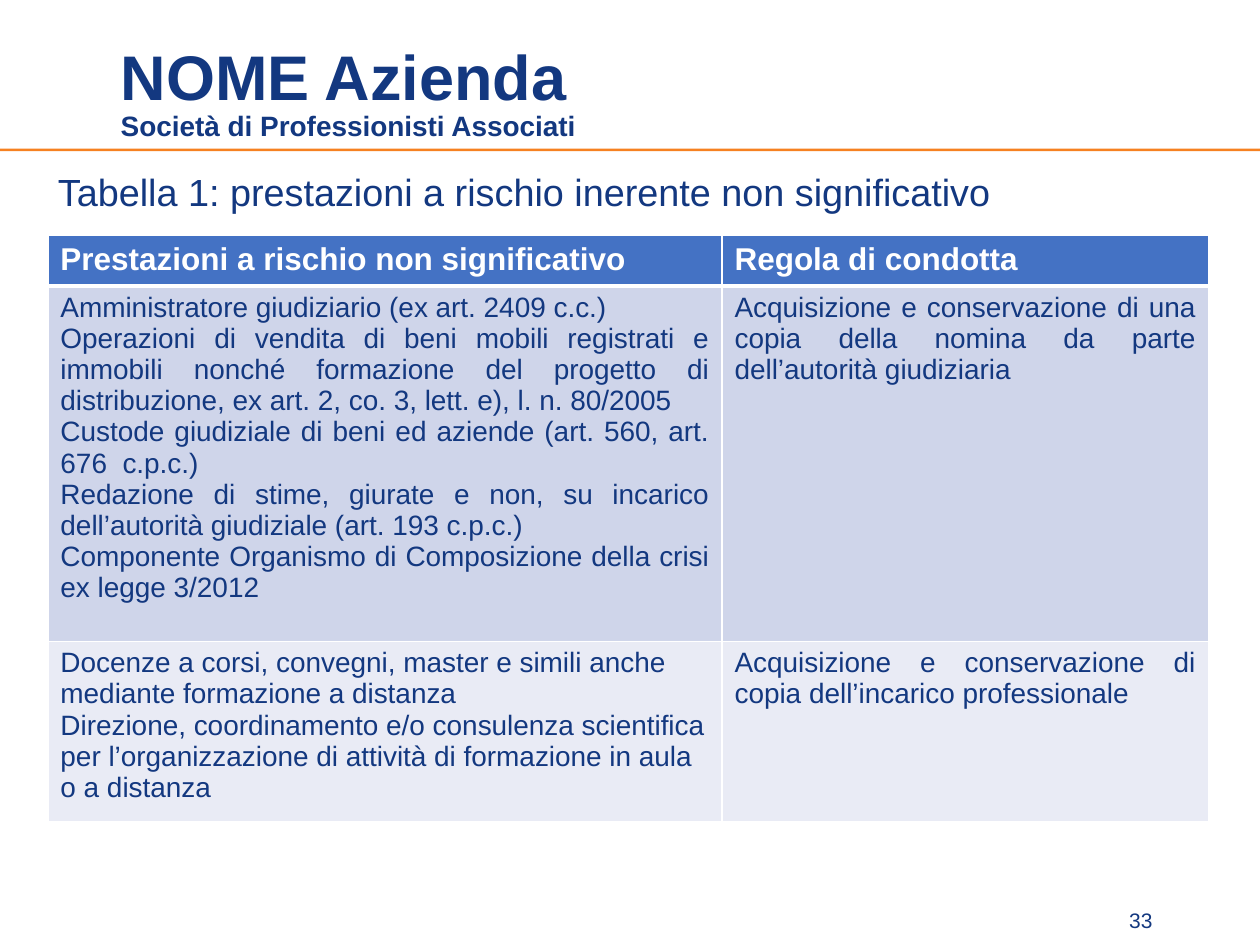
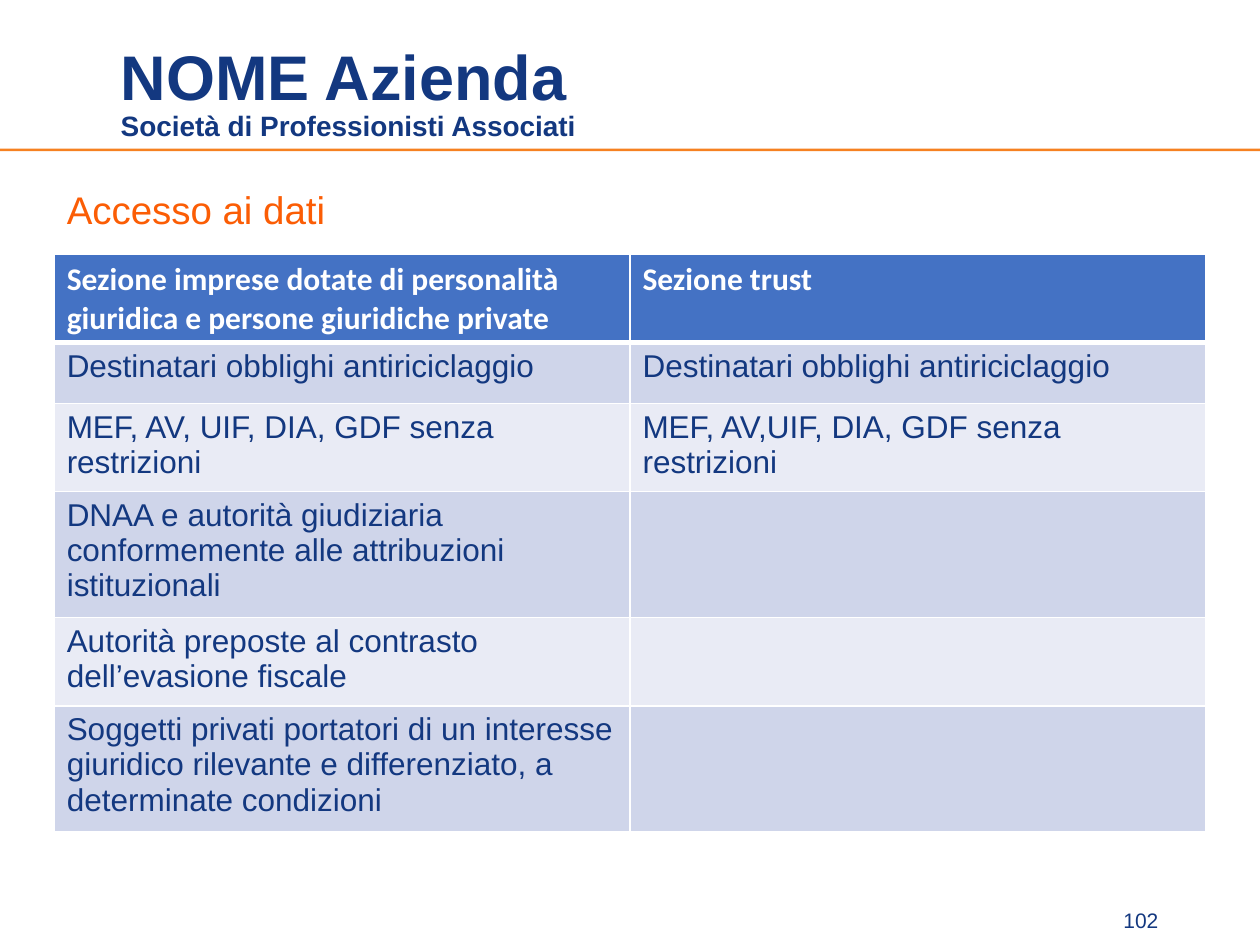
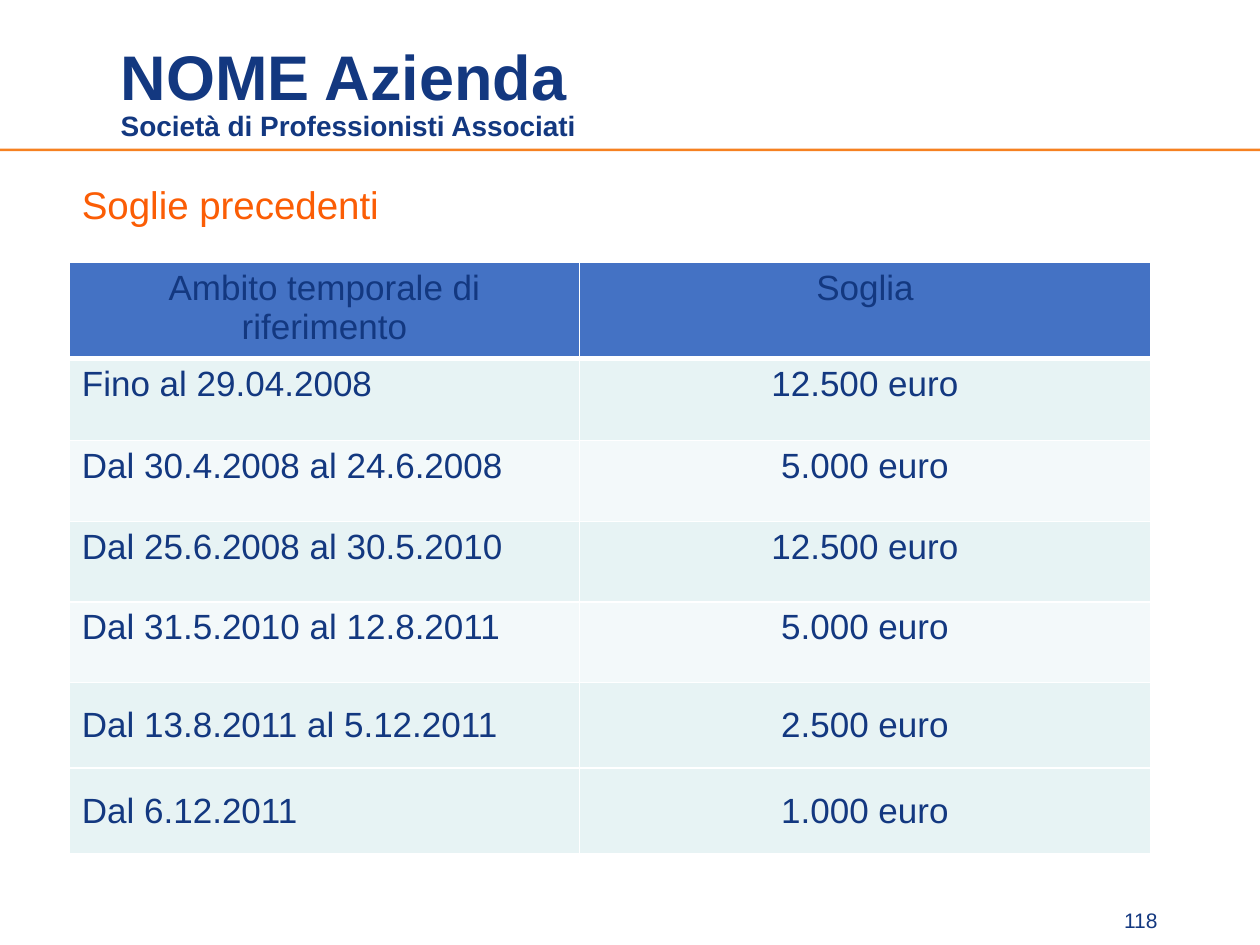
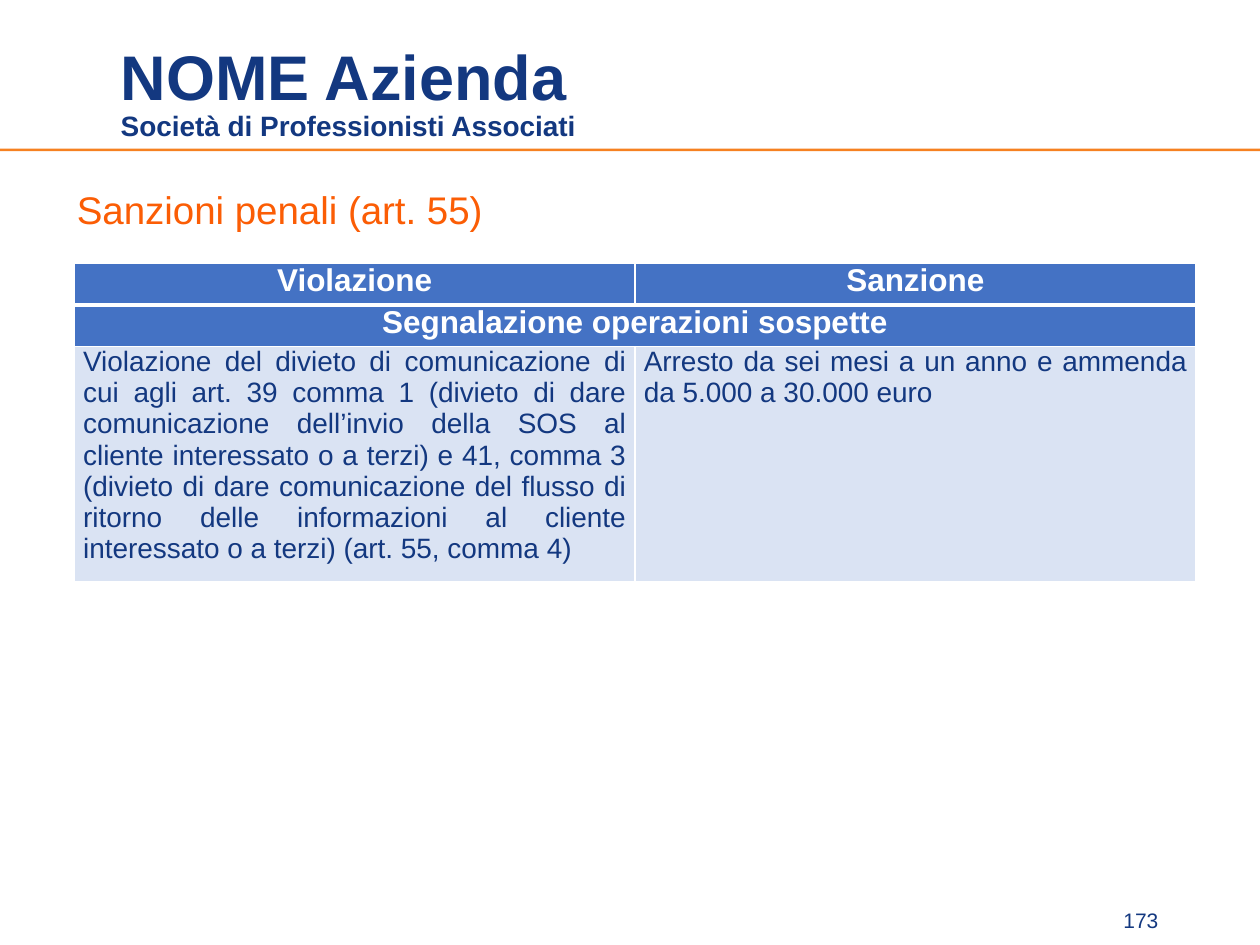
from pptx import Presentation
from pptx.dml.color import RGBColor
from pptx.enum.shapes import MSO_SHAPE
from pptx.enum.text import MSO_ANCHOR, MSO_AUTO_SIZE, PP_ALIGN
from pptx.oxml import parse_xml
from pptx.oxml.ns import nsdecls
from pptx.util import Inches, Pt

# Shared look
NAVY, ORANGE, RULE = "133880", "FB5D05", "F68121"
WHITE, BLUE = "FFFFFF", "4472C4"
ALIGN = {"l": PP_ALIGN.LEFT, "c": PP_ALIGN.CENTER, "j": PP_ALIGN.JUSTIFY}


def color(code):
    return RGBColor.from_string(code)


def style(para, size, hue=NAVY, bold=False, face="Arial", align="l"):
    para.alignment = ALIGN[align]
    for run in para.runs:
        font = run.font
        font.name, font.size, font.bold = face, Pt(size), bold
        font.color.rgb = color(hue)


# Content: "head" counts header rows, "align" has one letter per cell
pages = [
    {
        "page": 33, "title": "Tabella 1: prestazioni a rischio inerente non significativo",
        "box": (0.36, 1.33, 9.53, 0.47), "hue": NAVY, "size": 21.6,
        "at": (0.38, 1.87), "cols": [5.35, 3.86], "tall": [0.37, 2.82, 1.39],
        "head": 1, "type": ("Arial", WHITE, True), "sizes": (18, 16),
        "fills": ["CFD5EA", "E9EBF5"], "align": ["ll", "jj", "lj"],
        "rows": [
            ("Prestazioni a rischio non significativo", "Regola di condotta"),
            ("Amministratore giudiziario (ex art. 2409 c.c.)\n"
             "Operazioni di vendita di beni mobili registrati e immobili nonché "
             "formazione del progetto di distribuzione, ex art. 2, co. 3, lett. e), "
             "l. n. 80/2005\n"
             "Custode giudiziale di beni ed aziende (art. 560, art. 676  c.p.c.)\n"
             "Redazione di stime, giurate e non, su incarico dell’autorità giudiziale "
             "(art. 193 c.p.c.)\n"
             "Componente Organismo di Composizione della crisi ex legge 3/2012",
             "Acquisizione e conservazione di una copia della nomina da parte "
             "dell’autorità giudiziaria"),
            ("Docenze a corsi, convegni, master e simili anche mediante formazione "
             "a distanza\n"
             "Direzione, coordinamento e/o consulenza scientifica per "
             "l’organizzazione di attività di formazione in aula o a distanza",
             "Acquisizione e conservazione di copia dell’incarico professionale"),
        ],
    },
    {
        "page": 102, "title": "Accesso ai dati",
        "box": (0.43, 1.47, 9.53, 0.71), "hue": ORANGE, "size": 22,
        "at": (0.43, 2.02), "cols": [4.57, 4.57],
        "tall": [0.7, 0.48, 0.66, 0.94, 0.66, 0.94],
        "head": 1, "type": ("Calibri", WHITE, True), "sizes": (18, 18),
        "fills": ["CFD5EA", "E9EBF5"], "align": ["ll"] * 6,
        "rows": [
            ("Sezione imprese dotate di personalità giuridica e persone "
             "giuridiche private", "Sezione trust"),
            ("Destinatari obblighi antiriciclaggio",
             "Destinatari obblighi antiriciclaggio"),
            ("MEF, AV, UIF, DIA, GDF senza restrizioni",
             "MEF, AV,UIF, DIA, GDF senza restrizioni"),
            ("DNAA e autorità giudiziaria conformemente alle attribuzioni "
             "istituzionali", ""),
            ("Autorità preposte al contrasto dell’evasione fiscale", ""),
            ("Soggetti privati portatori di un interesse giuridico rilevante e "
             "differenziato, a determinate condizioni", ""),
        ],
    },
    {
        "page": 118, "title": "Soglie precedenti",
        "box": (0.55, 1.43, 9.45, 0.58), "hue": ORANGE, "size": 22,
        "at": (0.55, 2.08), "cols": [4.05, 4.53],
        "tall": [0.71, 0.65, 0.64, 0.64, 0.64, 0.68, 0.68],
        "head": 1, "type": ("Arial", NAVY, False), "sizes": (20, 20),
        "fills": ["E7F3F4", "F3F9FA", "E7F3F4", "F3F9FA", "E7F3F4", "E7F3F4"],
        "align": ["cc"] + ["lc"] * 6, "middle": (5, 6),
        "rows": [
            ("Ambito temporale di riferimento", "Soglia"),
            ("Fino al 29.04.2008", "12.500 euro"),
            ("Dal 30.4.2008 al 24.6.2008", "5.000 euro"),
            ("Dal 25.6.2008 al 30.5.2010", "12.500 euro"),
            ("Dal 31.5.2010 al 12.8.2011", "5.000 euro"),
            ("Dal 13.8.2011 al 5.12.2011", "2.500 euro"),
            ("Dal 6.12.2011", "1.000 euro"),
        ],
    },
    {
        "page": 173, "title": "Sanzioni penali (art. 55)",
        "box": (0.51, 1.47, 9.49, 0.47), "hue": ORANGE, "size": 22,
        "at": (0.59, 2.09), "cols": [4.45, 4.45], "tall": [0.33, 0.33, 1.72],
        "head": 2, "type": ("Arial", WHITE, True), "sizes": (18, 16),
        "fills": ["DAE3F3"], "align": ["cc", "cc", "jj"],
        "pad": (0.07, 0), "merge": 1,
        "rows": [
            ("Violazione", "Sanzione"),
            ("Segnalazione operazioni sospette", ""),
            ("Violazione del divieto di comunicazione di cui agli art. 39 comma 1 "
             "(divieto di dare comunicazione dell’invio della SOS al cliente "
             "interessato o a terzi) e 41, comma 3 (divieto di dare comunicazione "
             "del flusso di ritorno delle informazioni al cliente interessato o a "
             "terzi) (art. 55, comma 4)",
             "Arresto da sei mesi a un anno e ammenda da 5.000 a 30.000 euro"),
        ],
    },
]

deck = Presentation()
deck.slide_width, deck.slide_height = Inches(10), Inches(7.5)
layout = deck.slide_layouts[5]

for num, info in enumerate(pages):
    slide = deck.slides.add_slide(layout)
    shapes = slide.shapes

    # Header band, made once and moved to the layout
    if num == 0:
        band = shapes.add_shape(MSO_SHAPE.RECTANGLE, 0, Inches(1.18),
                                Inches(10), Inches(0.02))
        band.shadow.inherit = False
        band.fill.solid()
        band.fill.fore_color.rgb = color(RULE)
        band.line.fill.background()
        name = shapes.add_textbox(Inches(0.86), Inches(0.61),
                                  Inches(6.82), Inches(0.58))
        name.text_frame.word_wrap = True
        name.text_frame.text = "NOME Azienda\nSocietà di Professionisti Associati"
        for para, size in zip(name.text_frame.paragraphs, (36, 16)):
            style(para, size, bold=True)
            para.line_spacing = Pt(17)
        for part in (band, name):
            layout.shapes.element.append(part.element)

    # Title
    title = shapes.title
    title.left, title.top, title.width, title.height = map(Inches, info["box"])
    frame = title.text_frame
    frame.text = info["title"]
    frame.word_wrap = True
    frame.auto_size = MSO_AUTO_SIZE.NONE
    frame.vertical_anchor = MSO_ANCHOR.TOP
    style(frame.paragraphs[0], info["size"], info["hue"])
    frame.paragraphs[0].line_spacing = 0.9

    # Page number
    foot = shapes.add_textbox(Inches(8.62), Inches(7.16), Inches(0.87), Inches(0.29))
    foot.text_frame.word_wrap = True
    foot.text_frame.vertical_anchor = MSO_ANCHOR.BOTTOM
    foot.text_frame.text = str(info["page"])
    style(foot.text_frame.paragraphs[0], 12, align="c")

    # Table
    rows, cols, tall, head = info["rows"], info["cols"], info["tall"], info["head"]
    left, top = info["at"]
    table = shapes.add_table(len(rows), len(cols), Inches(left), Inches(top),
                             Inches(sum(cols)), Inches(sum(tall))).table
    for col, width in zip(table.columns, cols):
        col.width = Inches(width)
    for row, height in zip(table.rows, tall):
        row.height = Inches(height)
    if "merge" in info:
        line = info["merge"]
        table.cell(line, 0).merge(table.cell(line, len(cols) - 1))

    side, edge = info.get("pad", (0.1, 0.05))
    face, ink, bold = info["type"]
    for r, texts in enumerate(rows):
        for c, text in enumerate(texts):
            cell = table.cell(r, c)
            cell.margin_left = cell.margin_right = Inches(side)
            cell.margin_top = cell.margin_bottom = Inches(edge)
            if r in info.get("middle", ()):
                cell.vertical_anchor = MSO_ANCHOR.MIDDLE
            cell.text_frame.text = text
            for para in cell.text_frame.paragraphs:
                if r < head:
                    style(para, info["sizes"][0], ink, bold, face, info["align"][r][c])
                else:
                    style(para, info["sizes"][1], align=info["align"][r][c])

            # White borders, thick under the first row; they precede the fill
            props = cell._tc.get_or_add_tcPr()
            for tag in ("lnL", "lnR", "lnT", "lnB"):
                thick = (r, tag) in ((0, "lnB"), (1, "lnT"))
                props.append(parse_xml(
                    f'<a:{tag} {nsdecls("a")} w="{Pt(3 if thick else 1)}"><a:solidFill>'
                    f'<a:srgbClr val="{WHITE}"/></a:solidFill></a:{tag}>'))
            fills = info["fills"]
            cell.fill.solid()
            cell.fill.fore_color.rgb = color(
                BLUE if r < head else fills[(r - head) % len(fills)])

deck.save("out.pptx")
